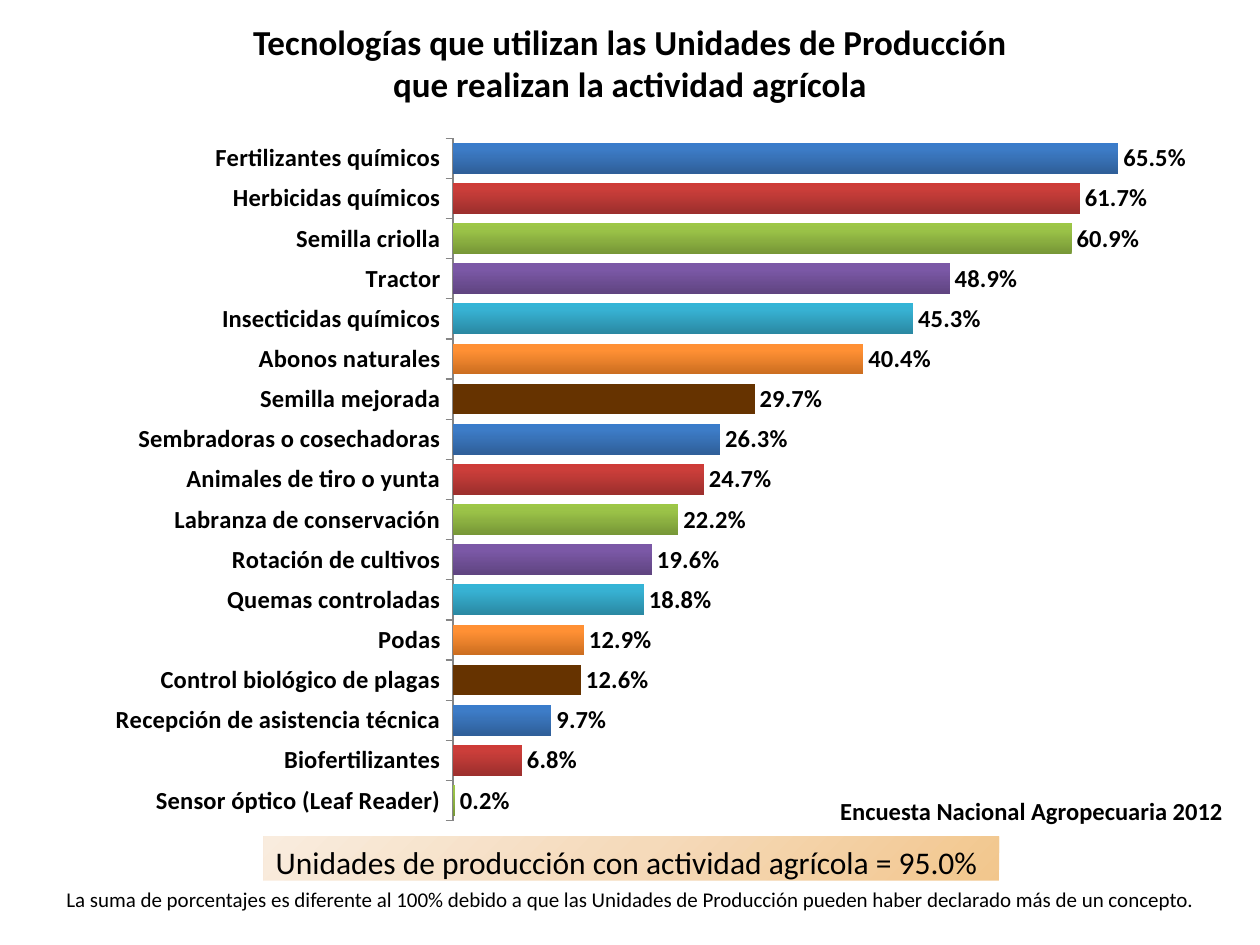
import copy

import lxml.etree
import pptx
import pptx.chart.data
import pptx.dml.color
import pptx.enum.chart
import pptx.enum.shapes
import pptx.enum.text
import pptx.util

Inches = pptx.util.Inches
Pt = pptx.util.Pt
COLORS = {"ink": "000000", "paper": "FFFFFF", "axis": "868686", "brown": "663300"}
BAND = [(0, "F2C68C"), (0.5, "F5DABA"), (1, "F9ECDE")]
SHADES = [
    ("2F5F99", "3D7CC7", "3A7CCB"),
    ("9C2F2D", "CB3E3A", "CE3B37"),
    ("779737", "9BC348", "9DC746"),
    ("5F4480", "7B58A6", "7C57A8"),
    ("2A88A2", "37B1D2", "34B4D6"),
    ("CC6E20", "FF9034", "FF9136"),
    None,
]
USES = [
    ("Fertilizantes químicos", 0.655),
    ("Herbicidas químicos", 0.617),
    ("Semilla criolla", 0.609),
    ("Tractor", 0.489),
    ("Insecticidas químicos", 0.453),
    ("Abonos naturales", 0.404),
    ("Semilla mejorada", 0.297),
    ("Sembradoras o cosechadoras", 0.263),
    ("Animales de tiro o yunta", 0.247),
    ("Labranza de conservación", 0.222),
    ("Rotación de cultivos", 0.196),
    ("Quemas controladas", 0.188),
    ("Podas", 0.129),
    ("Control biológico de plagas", 0.126),
    ("Recepción de asistencia técnica", 0.097),
    ("Biofertilizantes", 0.068),
    ("Sensor óptico (Leaf Reader)", 0.002),
]


def tint(name):
    return pptx.dml.color.RGBColor.from_string(COLORS.get(name, name))


class Page:
    """Holds the text style and the current slide."""

    def __init__(self, slide, face="Calibri"):
        self.slide = slide
        self.face = face

    def style(self, font, size, bold=False):
        font.name = self.face
        font.size = Pt(size)
        font.bold = bold
        font.color.rgb = tint("ink")

    def paint(self, fill, stops, angle):
        fill.gradient()
        fill.gradient_angle = 360 - angle
        first = fill.gradient_stops[0]._gs
        first.addnext(copy.deepcopy(first))
        for stop, (place, color) in zip(fill.gradient_stops, stops):
            stop.position = place
            stop.color.rgb = tint(color)

    def letter(self, shape, lines, size, bold=False, center=False, wrap=True):
        frame = shape.text_frame
        frame.word_wrap = wrap
        frame.vertical_anchor = pptx.enum.text.MSO_ANCHOR.TOP
        align = pptx.enum.text.PP_ALIGN
        for i, line in enumerate(lines):
            para = frame.add_paragraph() if i else frame.paragraphs[0]
            para.alignment = align.CENTER if center else align.LEFT
            run = para.add_run()
            run.text = line
            self.style(run.font, size, bold)

    def text(self, box, lines, size, **look):
        shape = self.slide.shapes.add_textbox(*map(Inches, box))
        self.letter(shape, lines, size, **look)

    def panel(self, box, lines, size, stops=None, **look):
        kind = pptx.enum.shapes.MSO_SHAPE.RECTANGLE
        shape = self.slide.shapes.add_shape(kind, *map(Inches, box))
        shape.shadow.inherit = False
        shape.line.fill.background()
        if stops:
            self.paint(shape.fill, stops, 225)
        else:
            shape.fill.solid()
            shape.fill.fore_color.rgb = tint("paper")
        self.letter(shape, lines, size, **look)

    def place(self, chart, **spots):
        area = chart._chartSpace.xpath("c:chart/c:plotArea")[0]
        for old in area.xpath("c:layout"):
            area.remove(old)
        space = area.nsmap["c"]
        layout = lxml.etree.Element(f"{{{space}}}layout")
        manual = lxml.etree.SubElement(layout, f"{{{space}}}manualLayout")
        modes = {"layoutTarget": "inner", "xMode": "edge", "yMode": "edge"}
        for tag, value in (modes | spots).items():
            lxml.etree.SubElement(manual, f"{{{space}}}{tag}").set("val", str(value))
        area.insert(0, layout)

    def bars(self, box, rows):
        enum = pptx.enum.chart
        data = pptx.chart.data.CategoryChartData(number_format="0.0%")
        rows = rows[::-1]
        data.categories = [name for name, share in rows]
        data.add_series("Series 1", [share for name, share in rows])
        kind = enum.XL_CHART_TYPE.BAR_CLUSTERED
        chart = self.slide.shapes.add_chart(kind, *map(Inches, box), data).chart
        chart.has_legend = False
        chart.has_title = False
        self.style(chart.font, 10)
        self.place(chart, x=0.348, y=0.031, w=0.613, h=0.947)

        names = chart.category_axis
        names.major_tick_mark = enum.XL_TICK_MARK.OUTSIDE
        names.format.line.color.rgb = tint("axis")
        self.style(names.tick_labels.font, 14, True)
        scale = chart.value_axis
        scale.visible = False
        scale.has_major_gridlines = False
        scale.minimum_scale = 0
        scale.maximum_scale = 0.7

        plot = chart.plots[0]
        plot.gap_width = 31
        plot.vary_by_categories = False
        plot.has_data_labels = True
        labels = plot.data_labels
        labels.show_value = True
        labels.number_format = "0.0%"
        labels.number_format_is_linked = False
        labels.position = enum.XL_LABEL_POSITION.OUTSIDE_END
        self.style(labels.font, 14, True)

        last = len(rows) - 1
        for i in range(len(rows)):
            fill = plot.series[0].points[i].format.fill
            shade = SHADES[(last - i) % len(SHADES)]
            if shade:
                self.paint(fill, list(zip((0, 0.8, 1), shade)), 270)
            else:
                fill.solid()
                fill.fore_color.rgb = tint("brown")


def main():
    deck = pptx.Presentation()
    deck.slide_width = Inches(10)
    deck.slide_height = Inches(7.5)
    page = Page(deck.slides.add_slide(deck.slide_layouts[6]))
    page.panel((2.09, 6.64, 5.84, 0.4),
               ["Unidades de producción con actividad agrícola = 95.0%"],
               18, stops=BAND, wrap=False)
    page.panel((0.2, 6.99, 9.61, 0.3),
               ["La suma de porcentajes es diferente al 100% debido a que las "
                "Unidades de Producción pueden haber declarado más de un concepto."],
               12, center=True)
    page.bars((0.39, 0.92, 9.21, 5.72), USES)
    page.text((0, 0.11, 10, 0.77),
              ["Tecnologías que utilizan las Unidades de Producción",
               "que realizan la actividad agrícola"],
              20, bold=True, center=True)
    page.text((6.57, 6.27, 3.26, 0.34), ["Encuesta Nacional Agropecuaria 2012"],
              14, bold=True, wrap=False)
    deck.save("out.pptx")


if __name__ == "__main__":
    main()
